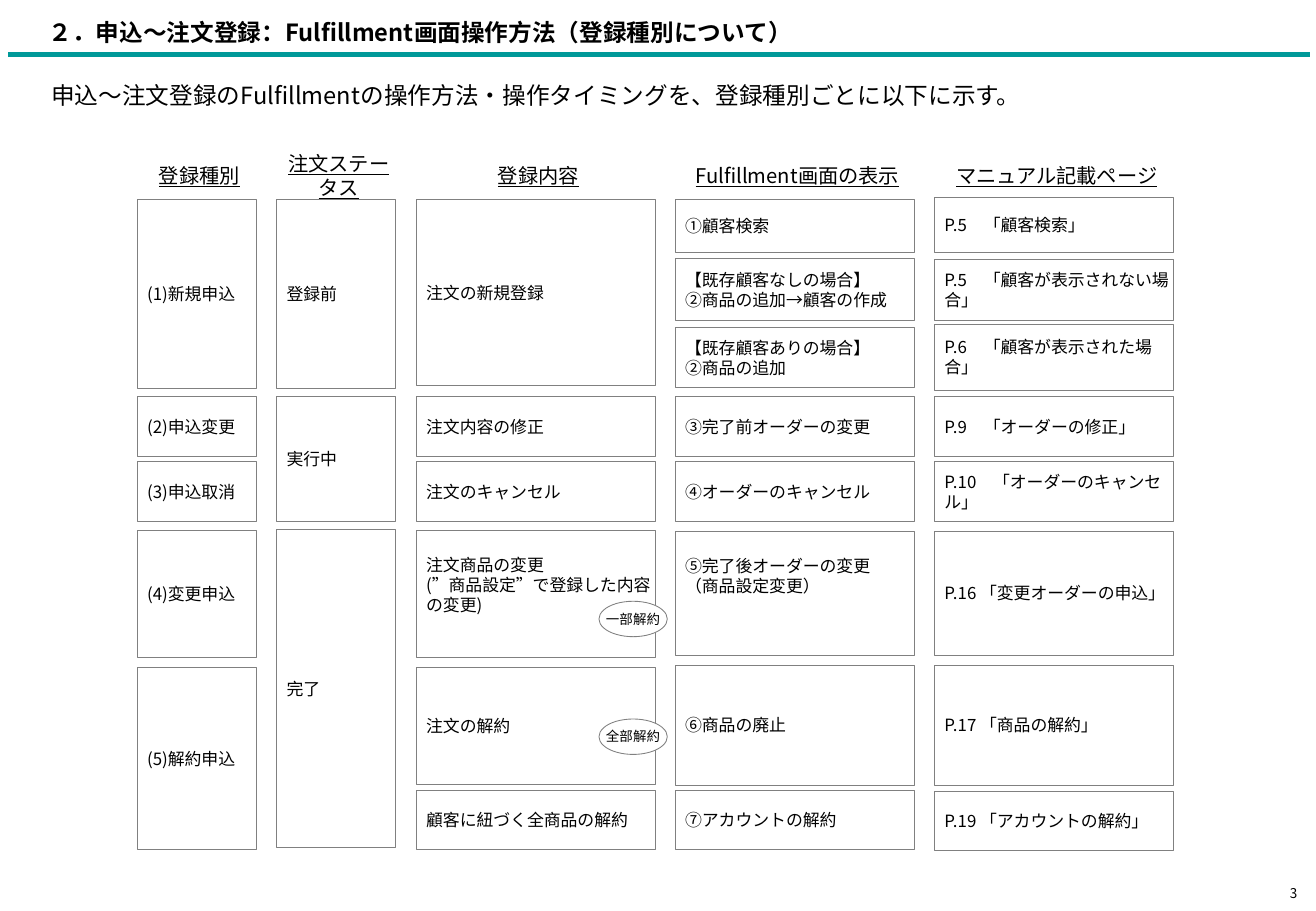
from lxml import etree
from pptx import Presentation
from pptx import util as u
from pptx.dml.color import RGBColor
from pptx.enum import shapes, text
from pptx.oxml.ns import qn

FONT = "Noto Sans CJK JP"
LINE_RATIO = 1.185
COLOURS = {"ink": "000000", "paper": "FFFFFF", "border": "808080", "rule": "009999"}
INSETS = {"margin_left": 5.8, "margin_top": 2.9, "margin_right": 2.9, "margin_bottom": 2.9}
OVAL_INSETS = dict.fromkeys(INSETS, 2.9)
PAGE_INSETS = {"margin_left": 7.2, "margin_top": 3.6, "margin_right": 7.2, "margin_bottom": 3.6}
TOP, MIDDLE = text.MSO_ANCHOR.TOP, text.MSO_ANCHOR.MIDDLE
LEFT, CENTER, RIGHT = text.PP_ALIGN.LEFT, text.PP_ALIGN.CENTER, text.PP_ALIGN.RIGHT

TITLE = "２．申込～注文登録：Fulfillment画面操作方法（登録種別について）"
LEAD = "申込～注文登録のFulfillmentの操作方法・操作タイミングを、登録種別ごとに以下に示す。"
PAGE_NUMBER = "3"

# heading, left, width, cells as (text, top, height)
COLUMNS = [
    ("登録種別", 81.4, 70.6, [
        ("(1)新規申込", 118.1, 112.3),
        ("(2)申込変更", 235.2, 35.3),
        ("(3)申込取消", 273.8, 35.3),
        ("(4)変更申込", 314.2, 75.8),
        ("(5)解約申込", 395.5, 108.3),
    ]),
    ("注文ステータス", 164, 70.6, [
        ("登録前", 118.1, 112.3),
        ("実行中", 235, 74.2),
        ("完了", 313.9, 188.4),
    ]),
    ("登録内容", 246.8, 141.8, [
        ("注文の新規登録", 118.1, 110.6),
        ("注文内容の修正", 235.2, 35.3),
        ("注文のキャンセル", 273.8, 35.3),
        ("注文商品の変更\n(”商品設定”で登録した内容の変更)", 314.2, 75.8),
        ("注文の解約", 395.5, 69.6),
        ("顧客に紐づく全商品の解約", 468.5, 35.3),
    ]),
    ("Fulfillment画面の表示", 400.3, 141.8, [
        ("①顧客検索", 118.1, 31.5),
        ("【既存顧客なしの場合】\n②商品の追加→顧客の作成", 153.4, 36.6),
        ("【既存顧客ありの場合】\n②商品の追加", 194.1, 35.8),
        ("③完了前オーダーの変更", 235.2, 35.3),
        ("④オーダーのキャンセル", 273.8, 35.3),
        ("⑤完了後オーダーの変更\n（商品設定変更）", 314.8, 73.6),
        ("⑥商品の廃止", 394.4, 71),
        ("⑦アカウントの解約", 468.5, 35.3),
    ]),
    ("マニュアル記載ページ", 554, 141.8, [
        ("P.5　「顧客検索」", 116.8, 33),
        ("P.5　「顧客が表示されない場合」", 153.8, 36.2),
        ("P.6　「顧客が表示された場合」", 192.2, 39),
        ("P.9　「オーダーの修正」", 235.2, 35.3),
        ("P.10　「オーダーのキャンセル」", 273.8, 35.3),
        ("P.16 「変更オーダーの申込」", 314.8, 73.6),
        ("P.17 「商品の解約」", 394.4, 71),
        ("P.19 「アカウントの解約」", 469, 35.3),
    ]),
]
TOP_ALIGNED = ("注文商品の変更", "⑤")
CANCELLATIONS = [("一部解約", 356.4), ("全部解約", 426.2)]


def colour(name):
    return RGBColor.from_string(COLOURS[name])


def write(shape, words, size, align=LEFT, anchor=MIDDLE, wrap=True, insets=INSETS, **font):
    frame = shape.text_frame
    frame.word_wrap, frame.vertical_anchor = wrap, anchor
    for side, length in insets.items():
        setattr(frame, side, u.Pt(length))
    frame.text = words
    style = {"name": FONT, "size": u.Pt(size), **font}
    for para in frame.paragraphs:
        para.alignment = align
        para.line_spacing = u.Pt(round(size * LINE_RATIO, 2))
        for span in para.runs:
            for key, value in style.items():
                setattr(span.font, key, value)
            span.font.color.rgb = colour("ink")
            latin = span.font._element.find(qn("a:latin"))
            east_asian = etree.Element(qn("a:ea"), typeface=FONT)
            latin.addnext(east_asian)


def add_label(page, area, words, size, **options):
    write(page.shapes.add_textbox(*map(u.Pt, area)), words, size, **options)


def add_outlined(page, kind, area, words, size, **options):
    shape = page.shapes.add_shape(kind, *map(u.Pt, area))
    shape.shadow.inherit = False
    shape.fill.solid()
    shape.fill.fore_color.rgb = colour("paper")
    shape.line.color.rgb = colour("border")
    shape.line.width = u.Pt(0.5)
    write(shape, words, size, **options)


def add_rule(page):
    rule = page.shapes.add_connector(
        shapes.MSO_CONNECTOR.STRAIGHT, *map(u.Pt, (5, 32.4, 776.2, 32.4)))
    rule.line.color.rgb = colour("rule")
    rule.line.width = u.Pt(3)
    etree.SubElement(rule._element.spPr, qn("a:effectLst"))


def main():
    """Build the order registration guide slide."""
    deck = Presentation()
    deck.slide_width, deck.slide_height = u.Pt(780), u.Pt(540)
    page = deck.slides.add_slide(deck.slide_layouts[6])

    add_rule(page)
    add_label(page, (23, 5.8, 730.8, 26.6), TITLE, 14, bold=True)
    add_label(page, (24.5, 43.9, 730.8, 56.9), LEAD, 14, anchor=TOP,
              insets={**INSETS, "margin_top": 4})
    add_label(page, (749.5, 522, 26.6, 14.4), PAGE_NUMBER, 8, align=RIGHT,
              wrap=False, insets=PAGE_INSETS)

    lowered = {**INSETS, "margin_top": 14.8}
    for heading, left, width, cells in COLUMNS:
        add_label(page, (left, 91.6, width, 25.2), heading, 12, align=CENTER,
                  wrap=False, underline=True)
        for words, top, height in cells:
            layout = {"anchor": TOP, "insets": lowered} if words.startswith(TOP_ALIGNED) else {}
            add_outlined(page, shapes.MSO_SHAPE.RECTANGLE, (left, top, width, height),
                         words, 10, **layout)

    for words, top in CANCELLATIONS:
        add_outlined(page, shapes.MSO_SHAPE.OVAL, (355, top, 40.5, 21), words, 8,
                     align=CENTER, wrap=False, insets=OVAL_INSETS)

    deck.save("out.pptx")


if __name__ == "__main__":
    main()
